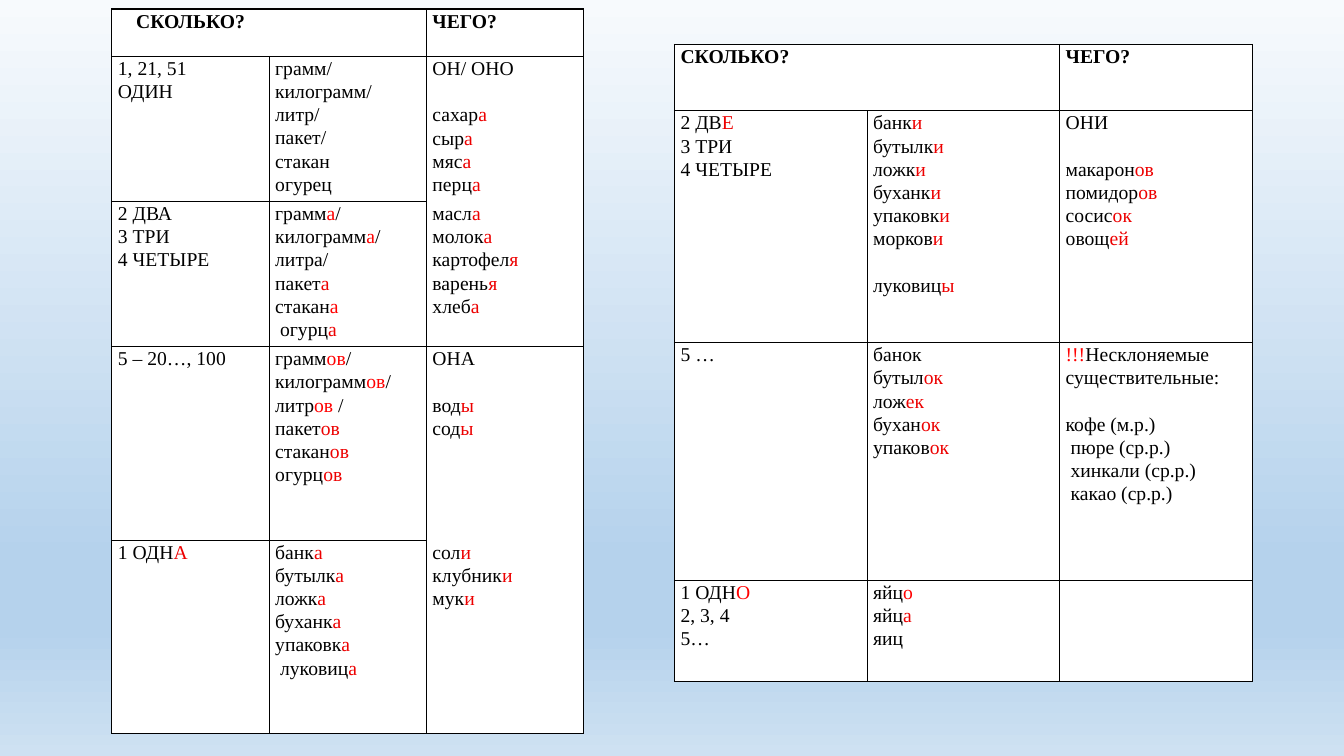
from lxml.etree import SubElement
from pptx import Presentation
from pptx.dml.color import RGBColor
from pptx.enum.text import PP_ALIGN
from pptx.oxml.ns import qn
from pptx.util import Inches, Pt

BLACK = RGBColor(0x00, 0x00, 0x00)
WHITE = RGBColor(0xFF, 0xFF, 0xFF)
ENDING_RED = RGBColor(0xED, 0x00, 0x00)
BRIGHT_RED = RGBColor(0xFF, 0x00, 0x00)
SKY = [
    (0, RGBColor(0xF7, 0xFA, 0xFD)),
    (74, RGBColor(0xB5, 0xD2, 0xEC)),
    (83, RGBColor(0xB5, 0xD2, 0xEC)),
    (100, RGBColor(0xCE, 0xE1, 0xF2)),
]

FONT = {"name": "Times New Roman", "size": Pt(14)}
CELL = {
    "margin_left": Inches(0.06),
    "margin_right": Inches(0.06),
    "margin_top": 0,
    "margin_bottom": 0,
}
PLAIN_TABLE = {"first_row": False, "horz_banding": False}
BLANK_LINE = Pt(16.6)
GAP, ENDING, BRIGHT = ">", "*", "~"

MASCULINE_ROWS = [
    [["СКОЛЬКО?"], [], ["ЧЕГО?"]],
    [
        ["1, 21, 51", "ОДИН"],
        ["грамм/", "килограмм/", "литр/", "пакет/", "стакан", "огурец"],
        ["ОН/ ОНО", ">сахар*а*", "сыр*а*", "мяс*а*", "перц*а*"],
    ],
    [
        ["2 ДВА", "3 ТРИ", "4 ЧЕТЫРЕ"],
        ["грамм~а~/", "килограмм~а~/", "литра/", "пакет*а*", "стакан~а~", " огурц*а*"],
        ["масл*а*", "молок*а*", "картофел*я*", "варень*я*", "хлеб*а*"],
    ],
    [
        ["5 – 20…, 100"],
        ["грамм~ов~/", "килограмм~ов~/", "литр~ов~ /", "пакет*ов*", "стакан*ов*", "огурц*ов*"],
        ["ОНА", ">вод*ы*", "сод*ы*"],
    ],
    [
        ["1 ОДН*А*"],
        ["банк*а*", "бутылк*а*", "ложк*а*", "буханк*а*", "упаковк*а*", " луковиц*а*"],
        ["сол*и*", "клубник*и*", "мук*и*"],
    ],
]
FEMININE_ROWS = [
    [["СКОЛЬКО?"], [], ["ЧЕГО?"]],
    [
        ["2 ДВ*Е*", "3 ТРИ", "4 ЧЕТЫРЕ"],
        ["банк*и*", "бутылк*и*", "ложк*и*", "буханк*и*", "упаковк*и*", "морков*и*", ">луковиц*ы*"],
        ["ОНИ", ">макарон*ов*", "помидор*ов*", "сосис*ок*", "овощ*ей*"],
    ],
    [
        ["5 …"],
        ["банок", "бутыл*ок*", "лож*ек*", "бухан*ок*", "упаков*ок*"],
        ["~!!!~Несклоняемые существительные:", ">кофе (м.р.)", " пюре (ср.р.)",
         " хинкали (ср.р.)", " какао (ср.р.)"],
    ],
    [
        ["1 ОДН~О~", "2, 3, 4", "5…"],
        ["яйц~о~", "яйц*а*", "яиц"],
        [],
    ],
]
HEADER_OPEN = {(0, 0): "R", (0, 1): "L"}
MASCULINE_OPEN = {**HEADER_OPEN, (1, 2): "B", (2, 2): "T", (3, 2): "B", (4, 2): "T"}


def apply(target, formats):
    for name, value in formats.items():
        setattr(target, name, value)


def colored_parts(line):
    for i, outer in enumerate(line.split(BRIGHT)):
        for j, part in enumerate(outer.split(ENDING)):
            if part:
                yield part, BRIGHT_RED if i % 2 else ENDING_RED if j % 2 else BLACK


class GrammarSlide:
    def __init__(self, presentation):
        self.slide = presentation.slides.add_slide(presentation.slide_layouts[6])

    def background(self, stops):
        fill = self.slide.background.fill
        fill.gradient()
        fill.gradient_angle = 270
        stop_list = next(self.slide.element.iter(qn("a:gsLst")))
        for stop in list(stop_list):
            stop_list.remove(stop)
        for percent, color in stops:
            stop = SubElement(stop_list, qn("a:gs"), pos=str(percent * 1000))
            SubElement(stop, qn("a:srgbClr"), val=str(color))

    def borders(self, cell, open_side):
        properties = cell._tc.get_or_add_tcPr()
        for side in "LRTB":
            line = SubElement(properties, qn(f"a:ln{side}"), w=str(Pt(1)))
            if side == open_side:
                SubElement(line, qn("a:noFill"))
            else:
                solid = SubElement(line, qn("a:solidFill"))
                SubElement(solid, qn("a:srgbClr"), val=str(BLACK))

    def lines(self, frame, lines, bold):
        for index, line in enumerate(lines):
            paragraph = frame.add_paragraph() if index else frame.paragraphs[0]
            paragraph.line_spacing = 1.07
            if line.startswith(GAP):
                paragraph.space_before = BLANK_LINE
            for part, color in colored_parts(line.lstrip(GAP)):
                run = paragraph.add_run()
                run.text = part
                apply(run.font, {**FONT, "bold": bold})
                run.font.color.rgb = color

    def table(self, left, top, column_width, heights, rows, open_sides):
        columns = len(rows[0])
        table = self.slide.shapes.add_table(
            len(rows), columns, Inches(left), Inches(top),
            Inches(column_width * columns), Inches(sum(heights)),
        ).table
        apply(table, PLAIN_TABLE)
        for column in table.columns:
            column.width = Inches(column_width)
        for r, (height, row) in enumerate(zip(heights, rows)):
            table.rows[r].height = Inches(height)
            for c, lines in enumerate(row):
                cell = table.cell(r, c)
                apply(cell, CELL)
                self.borders(cell, open_sides.get((r, c)))
                cell.fill.solid()
                cell.fill.fore_color.rgb = WHITE
                self.lines(cell.text_frame, lines, bold=r == 0)
        return table


def main():
    presentation = Presentation()
    apply(presentation, {"slide_width": Inches(13.33), "slide_height": Inches(7.5)})
    grammar = GrammarSlide(presentation)
    grammar.background(SKY)
    masculine = grammar.table(
        1.11, 0.09, 1.56, [0.47, 1.44, 1.44, 1.92, 1.92], MASCULINE_ROWS, MASCULINE_OPEN
    )
    masculine.cell(0, 0).text_frame.paragraphs[0].alignment = PP_ALIGN.CENTER
    grammar.table(6.69, 0.44, 1.91, [0.66, 2.3, 2.36, 1], FEMININE_ROWS, HEADER_OPEN)
    presentation.save("out.pptx")


if __name__ == "__main__":
    main()
